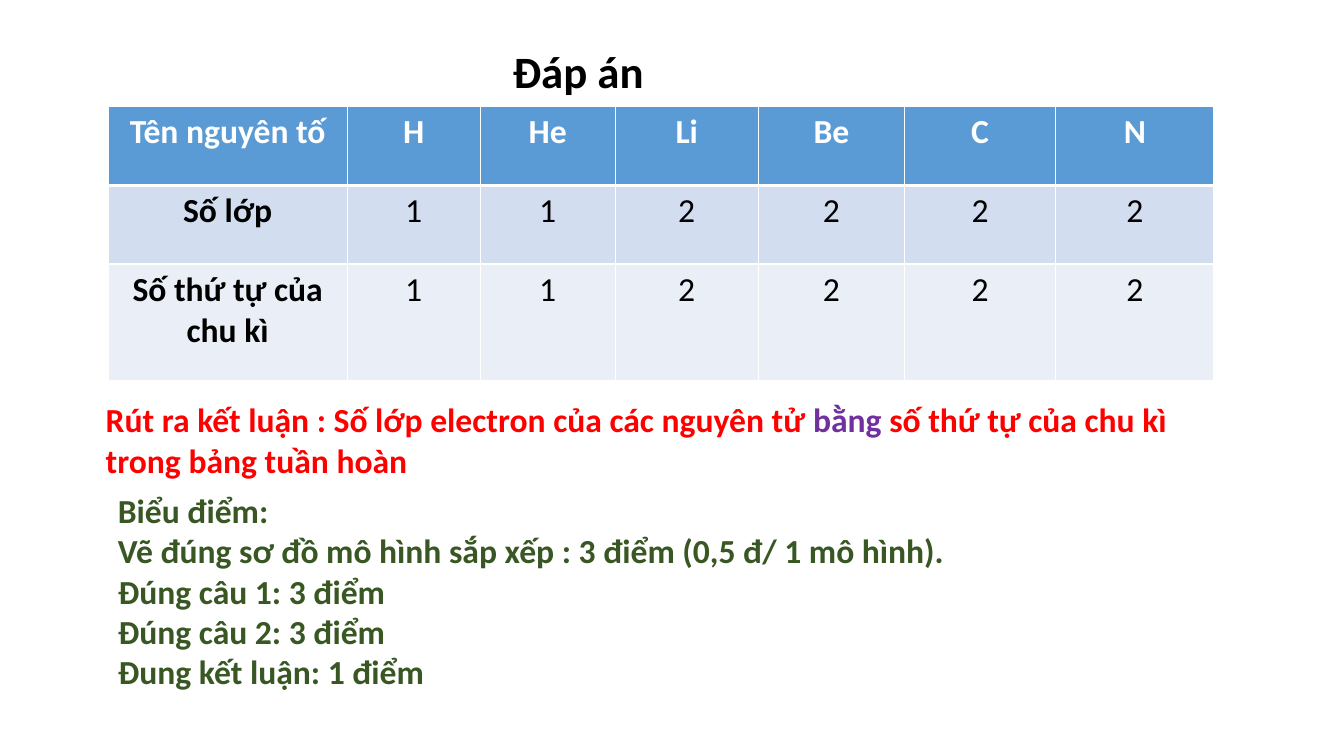
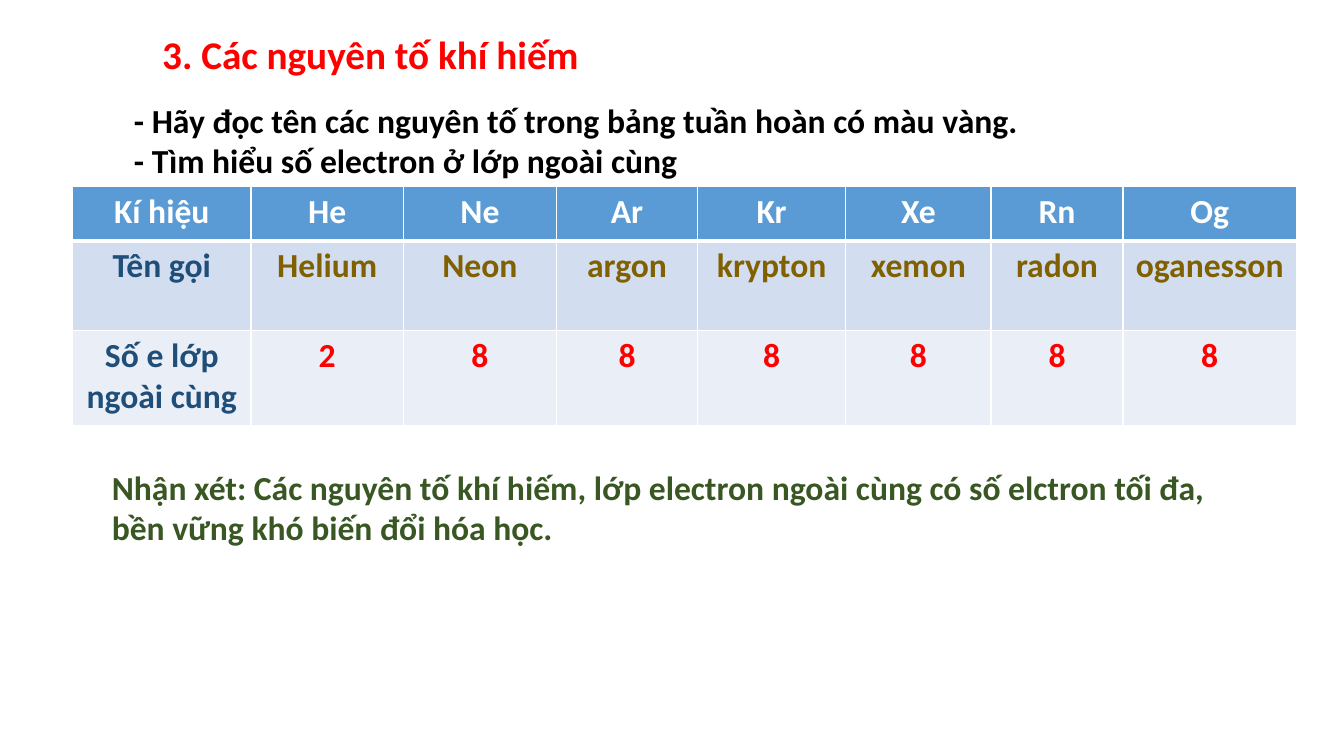
import pptx
import pptx.dml.color
import pptx.enum.text
import pptx.oxml.ns
import pptx.util
import lxml.etree

WIDTH = pptx.util.Inches(13.33)
HEIGHT = pptx.util.Inches(7.5)
FONT = "Calibri"
BLACK, WHITE, RED, PURPLE = "000000", "FFFFFF", "FF0000", "7030A0"
GREEN, NAVY, GOLD = "385723", "1F4E79", "806000"
ROW_FILLS = ["5B9BD5", "D2DEEF", "EAEFF7"]


def across(percent):
    return round(WIDTH * percent / 100)


def down(percent):
    return round(HEIGHT * percent / 100)


def rgb(color):
    return pptx.dml.color.RGBColor.from_string(color)


def write(frame, paragraphs, size=24, color=BLACK, bold=True, align="LEFT"):
    for index, content in enumerate(paragraphs):
        paragraph = frame.add_paragraph() if index else frame.paragraphs[0]
        paragraph.alignment = getattr(pptx.enum.text.PP_ALIGN, align)
        runs = [(content, color)] if isinstance(content, str) else content
        for text, run_color in runs:
            run = paragraph.add_run()
            run.text = text
            run.font.name = FONT
            run.font.size = pptx.util.Pt(size)
            run.font.bold = bold
            run.font.color.rgb = rgb(run_color)


def add_text(slide, left, top, width, height, paragraphs, **style):
    box = slide.shapes.add_textbox(across(left), down(top), across(width), down(height))
    box.text_frame.word_wrap = True
    write(box.text_frame, paragraphs, **style)


def add_borders(cell, **widths):
    properties = cell._tc.get_or_add_tcPr()
    for side in "LRTB":
        line = lxml.etree.SubElement(
            properties,
            pptx.oxml.ns.qn(f"a:ln{side}"),
            w=str(pptx.util.Pt(widths.get(side, 1))),
        )
        fill = lxml.etree.SubElement(line, pptx.oxml.ns.qn("a:solidFill"))
        lxml.etree.SubElement(fill, pptx.oxml.ns.qn("a:srgbClr"), val=WHITE)


def add_table(slide, left, top, columns, rows, values, label_color, body_colors, body_bold):
    table = slide.shapes.add_table(
        len(rows), len(columns), across(left), down(top), across(sum(columns)), down(sum(rows))
    ).table
    for column, width in zip(table.columns, columns):
        column.width = across(width)
    for row, height in zip(table.rows, rows):
        row.height = down(height)
    for row_index, row_values in enumerate(values):
        for column_index, value in enumerate(row_values):
            cell = table.cell(row_index, column_index)
            header, label = row_index == 0, column_index == 0
            add_borders(cell, T=3 if row_index == 1 else 1, B=3 if header else 1)
            cell.fill.solid()
            cell.fill.fore_color.rgb = rgb(ROW_FILLS[row_index])
            if header:
                color = WHITE
            else:
                color = label_color if label else body_colors[row_index - 1]
            write(cell.text_frame, [value], color=color,
                  bold=header or label or body_bold, align="CENTER")


def build_answers(slide):
    add_text(slide, 37.4, 5.07, 32.9, 8.5, ["Đáp án"], size=32)
    layers = ["1", "1", "2", "2", "2", "2"]
    add_table(
        slide, 8.05, 14.13,
        columns=[17.78, 9.9, 10.05, 10.65, 10.88, 11.25, 11.78],
        rows=[10.4, 10.4, 15.47],
        values=[
            ["Tên nguyên tố", "H", "He", "Li", "Be", "C", "N"],
            ["Số lớp", *layers],
            ["Số thứ tự của chu kì", *layers],
        ],
        label_color=BLACK, body_colors=[BLACK, BLACK], body_bold=False,
    )
    conclusion = [
        ("Rút ra kết luận : Số lớp electron của các nguyên tử ", RED),
        ("bằng", PURPLE),
        (" số thứ tự của chu kì trong bảng tuần hoàn", RED),
    ]
    add_text(slide, 7.13, 52.13, 84.17, 12.13, [conclusion])
    scoring = [
        "Biểu điểm:",
        "Vẽ đúng sơ đồ mô hình sắp xếp : 3 điểm (0,5 đ/ 1 mô hình).",
        "Đúng câu 1: 3 điểm",
        "Đúng câu 2: 3 điểm",
        "Đung kết luận: 1 điểm",
    ]
    add_text(slide, 8.03, 64.13, 68.4, 28.27, scoring, color=GREEN)


def build_noble_gases(slide):
    add_text(slide, 11.33, 3.33, 40.2, 7.6, ["3. Các nguyên tố khí hiếm"], size=28, color=RED)
    tasks = [
        "- Hãy đọc tên các nguyên tố trong bảng tuần hoàn có màu vàng.",
        "- Tìm hiểu số electron ở lớp ngoài cùng",
    ]
    add_text(slide, 9.23, 12.53, 70.8, 12.13, tasks)
    add_table(
        slide, 5.4, 24.67,
        columns=[13.28, 11.33, 11.4, 10.5, 11.03, 10.8, 9.83, 12.9],
        rows=[7.2, 11.87, 12.53],
        values=[
            ["Kí hiệu", "He", "Ne", "Ar", "Kr", "Xe", "Rn", "Og"],
            ["Tên gọi", "Helium", "Neon", "argon", "krypton", "xemon", "radon", "oganesson"],
            ["Số e lớp ngoài cùng", "2", *["8"] * 6],
        ],
        label_color=NAVY, body_colors=[GOLD, RED], body_bold=True,
    )
    remark = (
        "Nhận xét: Các nguyên tố khí hiếm, lớp electron ngoài cùng có số elctron tối đa, "
        "bền vững khó biến đổi hóa học."
    )
    add_text(slide, 7.58, 61.07, 83.12, 12.13, [remark], color=GREEN)


def main():
    presentation = pptx.Presentation()
    presentation.slide_width = WIDTH
    presentation.slide_height = HEIGHT
    for build in (build_answers, build_noble_gases):
        build(presentation.slides.add_slide(presentation.slide_layouts[6]))
    presentation.save("out.pptx")


if __name__ == "__main__":
    main()
